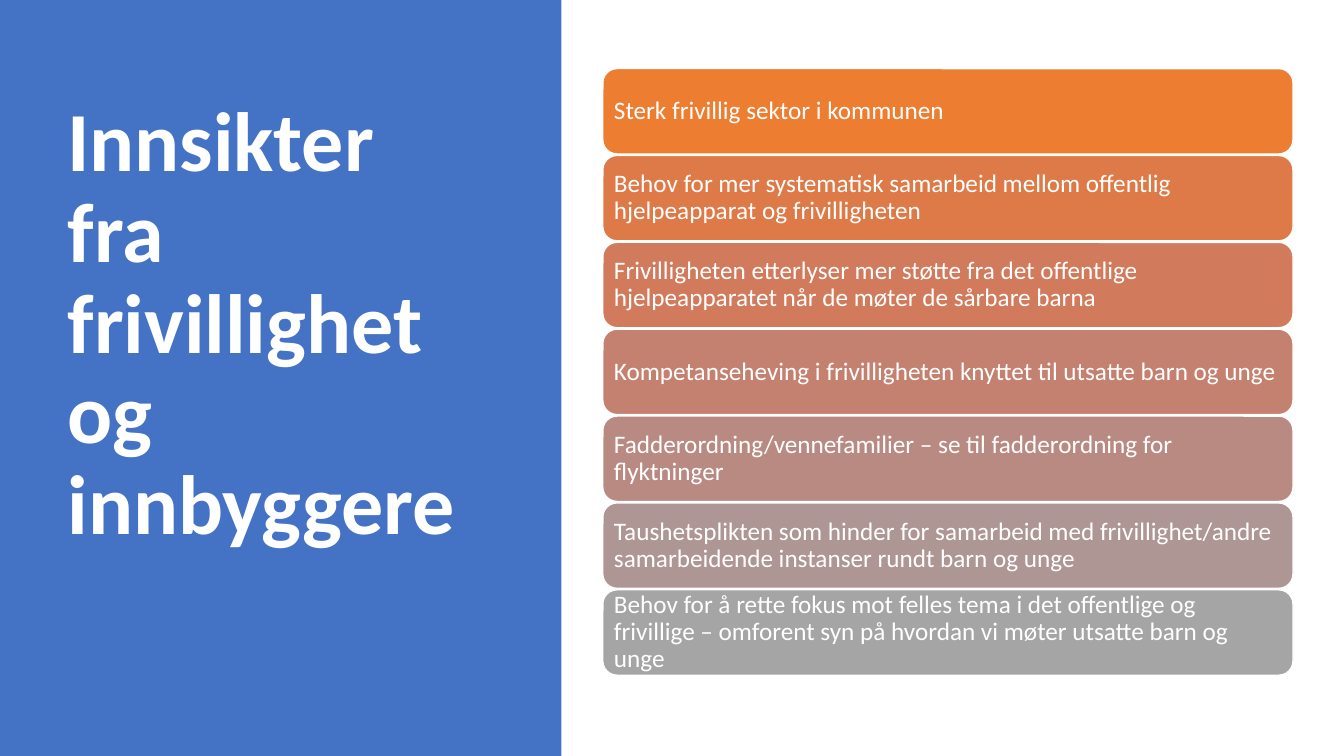
from pptx import Presentation
from pptx.dml.color import RGBColor
from pptx.enum.shapes import MSO_SHAPE as Shape
from pptx.enum.text import MSO_ANCHOR as Anchor, MSO_AUTO_SIZE as AutoSize, PP_ALIGN as Align
from pptx.util import Pt

WHITE = RGBColor(0xFF, 0xFF, 0xFF)
BLUE = RGBColor(0x44, 0x72, 0xC4)
INSIGHTS = [
    ("Sterk frivillig sektor i kommunen", RGBColor(0xED, 0x7D, 0x31)),
    ("Behov for mer systematisk samarbeid mellom offentlig hjelpeapparat og frivilligheten",
     RGBColor(0xDE, 0x7A, 0x47)),
    ("Frivilligheten etterlyser mer støtte fra det offentlige hjelpeapparatet "
     "når de møter de sårbare barna", RGBColor(0xD1, 0x7B, 0x5C)),
    ("Kompetanseheving i frivilligheten knyttet til utsatte barn og unge",
     RGBColor(0xC4, 0x81, 0x70)),
    ("Fadderordning/vennefamilier – se til fadderordning for flyktninger",
     RGBColor(0xB9, 0x8A, 0x82)),
    ("Taushetsplikten som hinder for samarbeid med frivillighet/andre "
     "samarbeidende instanser rundt barn og unge", RGBColor(0xAE, 0x96, 0x94)),
    ("Behov for å rette fokus mot felles tema i det offentlige og frivillige – "
     "omforent syn på hvordan vi møter utsatte barn og unge", RGBColor(0xA5, 0xA5, 0xA5)),
]
BOX_LEFT, BOX_TOP, BOX_WIDTH, BOX_HEIGHT, BOX_STEP = 430.6, 49, 493, 61, 62.05


def add_filled_shape(kind, left, top, width, height, color):
    shape = slide.shapes.add_shape(kind, Pt(left), Pt(top), Pt(width), Pt(height))
    shape.shadow.inherit = False
    shape.fill.solid()
    shape.fill.fore_color.rgb = color
    return shape


def write_text(shape, text, size, bold):
    frame = shape.text_frame
    frame.text = text
    frame.word_wrap = True
    frame.auto_size = AutoSize.NONE
    frame.vertical_anchor = Anchor.MIDDLE
    para = frame.paragraphs[0]
    para.alignment = Align.LEFT
    para.line_spacing = 0.9
    para.font.name = "Calibri"
    para.font.size = Pt(size)
    para.font.bold = bold
    para.font.color.rgb = WHITE


deck = Presentation()
deck.slide_width, deck.slide_height = Pt(960), Pt(540)
slide = deck.slides.add_slide(deck.slide_layouts[5])

# Blue panel, placed behind the title
title = slide.shapes.title
panel = add_filled_shape(Shape.RECTANGLE, 0, 0, 401, 540, BLUE)
panel.line.fill.background()
title.element.addprevious(panel.element)

# Title, lifted above the middle by a deep bottom margin
title.left, title.top, title.width, title.height = Pt(41), Pt(49), Pt(299.5), Pt(433.5)
write_text(title, "Innsikter fra frivillighet og innbyggere", 60, True)
title.text_frame.margin_bottom = Pt(69.5)

# Stack of insights
for index, (insight, color) in enumerate(INSIGHTS):
    box = add_filled_shape(Shape.ROUNDED_RECTANGLE, BOX_LEFT, BOX_TOP + index * BOX_STEP,
                           BOX_WIDTH, BOX_HEIGHT, color)
    box.line.color.rgb = WHITE
    box.line.width = Pt(1)
    write_text(box, insight, 18, False)
    frame = box.text_frame
    frame.margin_left = frame.margin_right = Pt(5)
    frame.margin_top = frame.margin_bottom = Pt(0)

deck.save("out.pptx")
